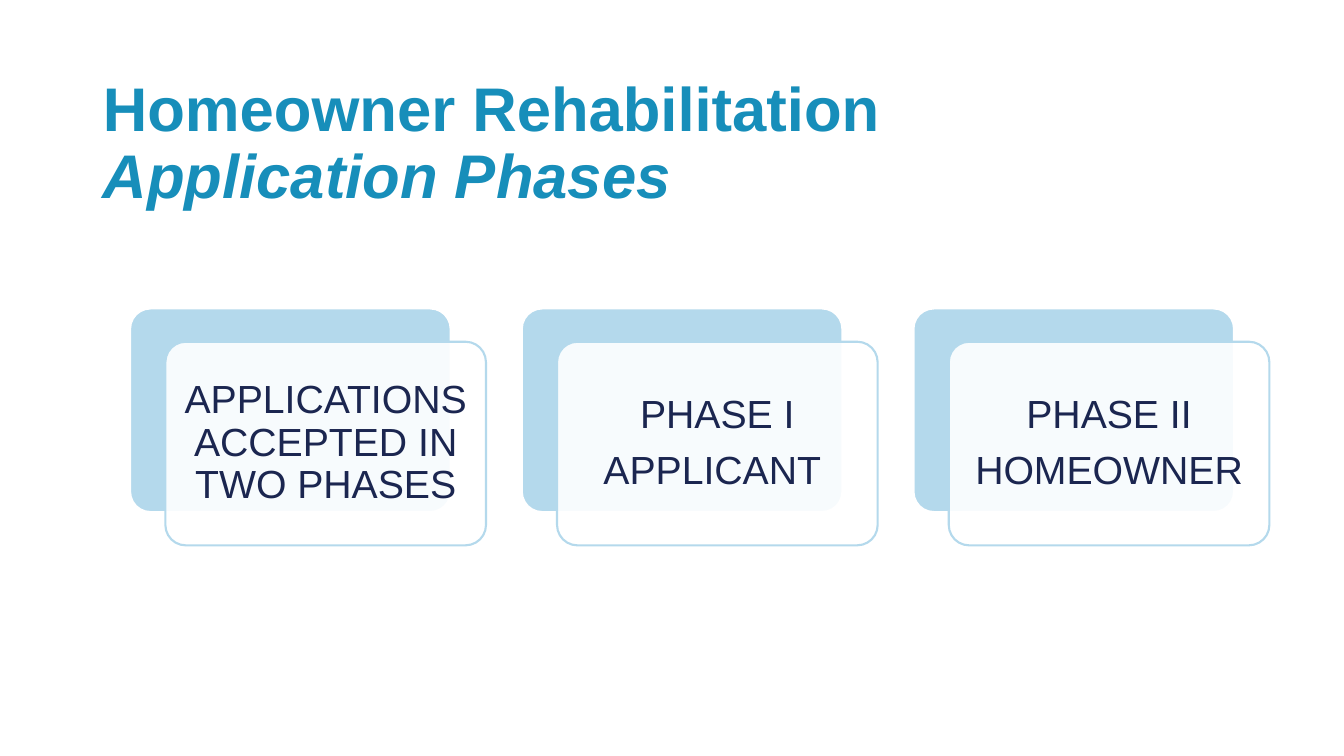
from pptx import Presentation
from pptx.dml.color import RGBColor
from pptx.enum.shapes import MSO_SHAPE
from pptx.enum.text import MSO_ANCHOR, MSO_AUTO_SIZE, PP_ALIGN
from pptx.oxml.xmlchemy import OxmlElement
from pptx.util import Inches, Pt

COLORS = {"title": "178EBA", "panel": "B4D9EC", "text": "1B2650", "white": "FFFFFF"}
FONT = "Arial"
PHASES = [
    ["APPLICATIONS ACCEPTED IN TWO PHASES"],
    ["PHASE I", "APPLICANT "],
    ["PHASE II", "HOMEOWNER"],
]
COLUMN_PITCH = 3.885
CARD_WIDTH, CARD_HEIGHT = 3.18, 2.02
OFFSET_X, OFFSET_Y = 0.35, 0.33


def color(name):
    return RGBColor.from_string(COLORS[name])


def style_font(font, size, color_name):
    font.name = FONT
    font.size = Pt(size)
    font.color.rgb = color(color_name)


def add_title(page, left, top, width, height):
    title = page.shapes.title
    title.left, title.top = Inches(left), Inches(top)
    title.width, title.height = Inches(width), Inches(height)
    frame = title.text_frame
    frame.auto_size = MSO_AUTO_SIZE.NONE
    frame.vertical_anchor = MSO_ANCHOR.BOTTOM
    frame.text = "Homeowner Rehabilitation\nApplication Phases"
    for para in frame.paragraphs:
        para.alignment = PP_ALIGN.LEFT
        para.line_spacing = 0.9
        style_font(para.font, 44, "title")
        para.font.bold = True
    frame.paragraphs[1].font.italic = True


def add_panel(page, left, top, fill, line):
    panel = page.shapes.add_shape(
        MSO_SHAPE.ROUNDED_RECTANGLE,
        Inches(left), Inches(top), Inches(CARD_WIDTH), Inches(CARD_HEIGHT))
    panel.adjustments[0] = 0.1
    panel.shadow.inherit = False
    panel.fill.solid()
    panel.fill.fore_color.rgb = color(fill)
    panel.line.color.rgb = color(line)
    panel.line.width = Pt(1.5)
    return panel


def add_phase_card(page, left, top, lines):
    # Solid panel behind, translucent labelled panel in front
    add_panel(page, left, top, "panel", "white")
    front = add_panel(page, left + OFFSET_X, top + OFFSET_Y, "white", "panel")
    alpha = OxmlElement("a:alpha")
    alpha.set("val", "90000")
    front.fill._xPr.solidFill[0].append(alpha)

    frame = front.text_frame
    frame.word_wrap = True
    frame.vertical_anchor = MSO_ANCHOR.MIDDLE
    frame.margin_left = frame.margin_right = Inches(0.12)
    frame.margin_top = frame.margin_bottom = Inches(0.12)
    frame.text = "\n".join(lines)
    for para in frame.paragraphs:
        para.alignment = PP_ALIGN.CENTER
        para.line_spacing = 0.9
        para.space_after = Pt(10)
        style_font(para.font, 28, "text")


def add_phase_row(page, left, top):
    for column, lines in enumerate(PHASES):
        add_phase_card(page, left + column * COLUMN_PITCH, top, lines)


def main():
    deck = Presentation()
    deck.slide_width, deck.slide_height = Inches(13.33), Inches(7.5)
    page = deck.slides.add_slide(deck.slide_layouts[5])
    add_title(page, 0.92, 0.7, 11.5, 1.45)
    add_phase_row(page, 1.29, 3.06)
    deck.save("out.pptx")


if __name__ == "__main__":
    main()
